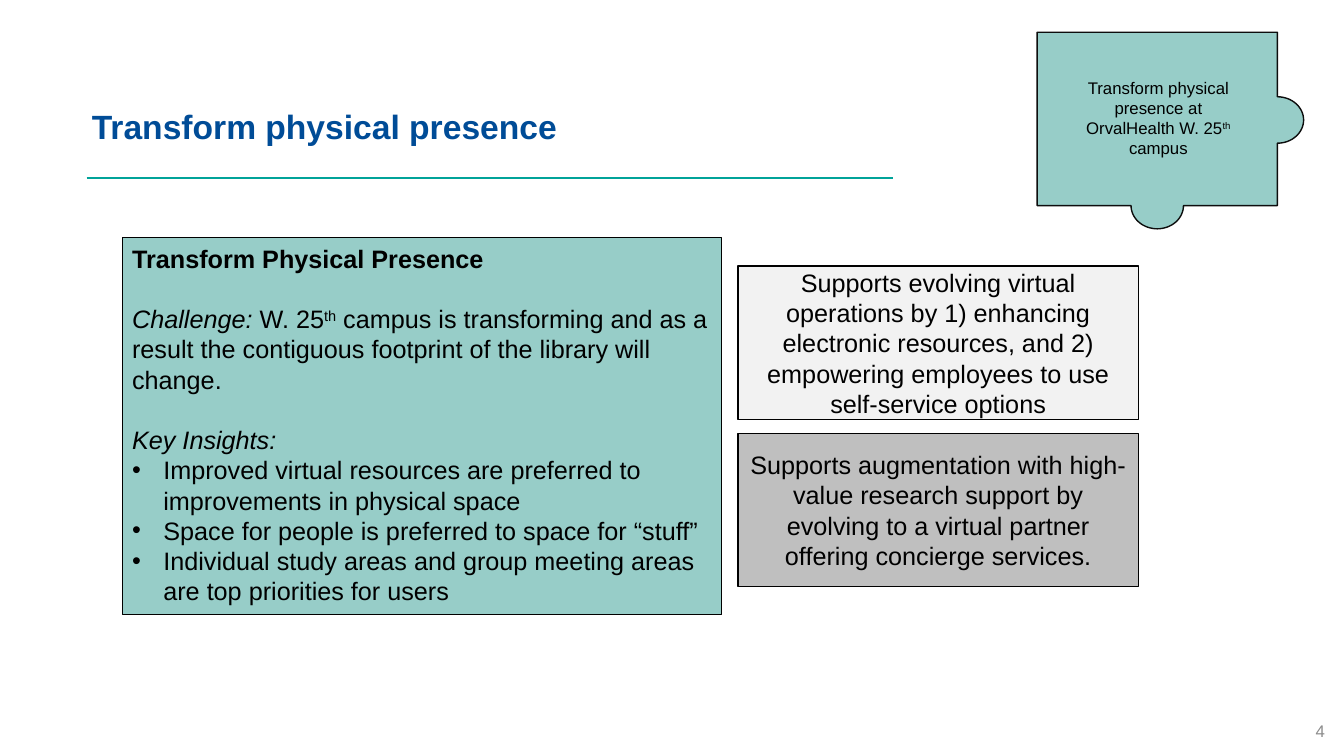
from dataclasses import dataclass
from math import cos, pi, sin

from lxml.etree import SubElement
from pptx import Presentation
from pptx.dml.color import RGBColor
from pptx.enum.shapes import MSO_CONNECTOR as Connector, MSO_SHAPE as Shape
from pptx.enum.text import MSO_ANCHOR as Anchor, MSO_AUTO_SIZE as AutoSize, PP_ALIGN as Align
from pptx.oxml.ns import qn
from pptx.util import Inches, Pt

FONT = "Arial"
COLORS = {
    "title": "004C97", "rule": "00A399", "teal": "97CDC8", "light": "F2F2F2",
    "grey": "BFBFBF", "black": "000000", "outline": "0D0D0D", "number": "8C8C8C",
}
SLIDE_WIDTH, SLIDE_HEIGHT = Inches(13.33), Inches(7.5)
BULLET_INDENT = Inches(0.31)
BLANK_LINE = 21.6


@dataclass
class Area:
    """A rectangle in percent of the slide's width and height."""
    left: float
    top: float
    width: float
    height: float

    def box(self) -> tuple[int, int, int, int]:
        return across(self.left), down(self.top), across(self.width), down(self.height)


@dataclass
class Span:
    text: str
    bold: bool = False
    italic: bool = False
    raised: bool = False


@dataclass
class Line:
    spans: list[Span]
    bullet: bool = False
    space_before: float = 0


@dataclass
class Card:
    text: str
    color: str


PUZZLE = Area(77.17, 4.27, 17.88, 22.93)
PUZZLE_LABEL = Area(79.37, 9.6, 13.65, 12)
KNOB_WIDTH, KNOB_HEIGHT = 1.95, 3.07
CARD_AREA = Area(54.91, 35.2, 29.78, 20.27)
CARD_STEP = 22.13

LABEL = [Line([Span("Transform physical presence at OrvalHealth W. 25"),
               Span("th", raised=True), Span(" campus")])]
PANEL = [
    Line([Span("Transform Physical Presence", bold=True)]),
    Line([Span("Challenge: ", italic=True), Span("W. 25"), Span("th", raised=True),
          Span(" campus is transforming and as a result the contiguous footprint "
               "of the library will change.")], space_before=BLANK_LINE),
    Line([Span("Key Insights:", italic=True)], space_before=BLANK_LINE),
    Line([Span("Improved virtual resources are preferred to improvements in physical space")],
         bullet=True),
    Line([Span("Space for people is preferred to space for “stuff”")], bullet=True),
    Line([Span("Individual study areas and group meeting areas are top priorities for users")],
         bullet=True),
]
CARDS = [
    Card("Supports evolving virtual operations by 1) enhancing electronic resources, "
         "and 2) empowering employees to use self-service options", "light"),
    Card("Supports augmentation with high-value research support by evolving to a "
         "virtual partner offering concierge services.", "grey"),
]


def across(percent: float) -> int:
    return round(SLIDE_WIDTH * percent / 100)


def down(percent: float) -> int:
    return round(SLIDE_HEIGHT * percent / 100)


def rgb(name: str) -> RGBColor:
    return RGBColor.from_string(COLORS[name])


def place(shape, area: Area) -> None:
    shape.left, shape.top, shape.width, shape.height = area.box()


def paint(shape, fill: str, line: str, weight: float) -> None:
    shape.fill.solid()
    shape.fill.fore_color.rgb = rgb(fill)
    shape.line.color.rgb = rgb(line)
    shape.line.width = Pt(weight)


def set_bullet(paragraph, bullet: bool) -> None:
    properties = paragraph._p.get_or_add_pPr()
    indent = BULLET_INDENT if bullet else 0
    properties.set("marL", str(indent))
    properties.set("indent", str(-indent))
    if bullet:
        SubElement(properties, qn("a:buFont")).set("typeface", FONT)
        SubElement(properties, qn("a:buChar")).set("char", "•")
    else:
        SubElement(properties, qn("a:buNone"))


def write(shape, lines: list[Line], size: float, color: str = "black",
          align: Align = Align.LEFT, anchor: Anchor = Anchor.TOP) -> None:
    frame = shape.text_frame
    frame.word_wrap = True
    frame.auto_size = AutoSize.NONE
    frame.vertical_anchor = anchor
    for index, line in enumerate(lines):
        paragraph = frame.add_paragraph() if index else frame.paragraphs[0]
        set_bullet(paragraph, line.bullet)
        paragraph.alignment = align
        paragraph.space_before = Pt(line.space_before)
        for span in line.spans:
            run = paragraph.add_run()
            run.text = span.text
            font = run.font
            font.name, font.size = FONT, Pt(size)
            font.bold, font.italic = span.bold, span.italic
            font.color.rgb = rgb(color)
            if span.raised:
                run._r.get_or_add_rPr().set("baseline", "30000")


def half_ellipse(center_x: float, center_y: float, start: float) -> list[tuple[int, int]]:
    """Points clockwise over half a turn from the start angle."""
    steps = 32
    angles = [start + pi * step / steps for step in range(steps + 1)]
    return [(across(center_x + KNOB_WIDTH * cos(angle)), down(center_y + KNOB_HEIGHT * sin(angle)))
            for angle in angles]


def draw_puzzle(slide) -> None:
    left, top = PUZZLE.left, PUZZLE.top
    right, bottom = left + PUZZLE.width, top + PUZZLE.height
    points = [(across(right), down(top))]
    points += half_ellipse(right, top + PUZZLE.height / 2 + 0.14, -pi / 2)
    points.append((across(right), down(bottom)))
    points += half_ellipse(left + PUZZLE.width / 2, bottom, 0)
    points.append((across(left), down(bottom)))
    builder = slide.shapes.build_freeform(across(left), down(top))
    builder.add_line_segments(points, close=True)
    piece = builder.convert_to_shape()
    piece.shadow.inherit = False
    paint(piece, "teal", "outline", 1)
    label = slide.shapes.add_textbox(*PUZZLE_LABEL.box())
    write(label, LABEL, 12, align=Align.CENTER)


def draw_card(slide, card: Card, row: int) -> None:
    area = Area(CARD_AREA.left, CARD_AREA.top + row * CARD_STEP, CARD_AREA.width, CARD_AREA.height)
    shape = slide.shapes.add_shape(Shape.RECTANGLE, *area.box())
    shape.shadow.inherit = False
    paint(shape, card.color, "black", 1)
    write(shape, [Line([Span(card.text)])], 18, align=Align.CENTER, anchor=Anchor.MIDDLE)


def draw_rule(slide) -> None:
    rule = slide.shapes.add_connector(
        Connector.STRAIGHT, across(6.45), down(23.6), across(66.45), down(23.6))
    rule.line.color.rgb = rgb("rule")
    rule.line.width = Pt(1.5)
    SubElement(rule._element.spPr, qn("a:effectLst"))


def main() -> None:
    presentation = Presentation()
    presentation.slide_width, presentation.slide_height = SLIDE_WIDTH, SLIDE_HEIGHT
    slide = presentation.slides.add_slide(presentation.slide_layouts[1])

    # Heading, rule and page number
    title = slide.shapes.title
    place(title, Area(6.08, 14, 80.17, 8.4))
    write(title, [Line([Span("Transform physical presence", bold=True)])], 24, "title")
    title.text_frame.paragraphs[0].line_spacing = 0.9
    draw_rule(slide)
    number = slide.shapes.add_textbox(*Area(76, 94.67, 23.33, 5.33).box())
    write(number, [Line([Span("4")])], 12, "number", Align.RIGHT)

    # Puzzle piece
    draw_puzzle(slide)

    # Challenge and insights
    panel = slide.placeholders[1]
    place(panel, Area(9.08, 31.47, 44.64, 49.87))
    paint(panel, "teal", "black", 0.75)
    write(panel, PANEL, 18)

    # Supporting cards
    for row, card in enumerate(CARDS):
        draw_card(slide, card, row)

    presentation.save("out.pptx")


if __name__ == "__main__":
    main()
